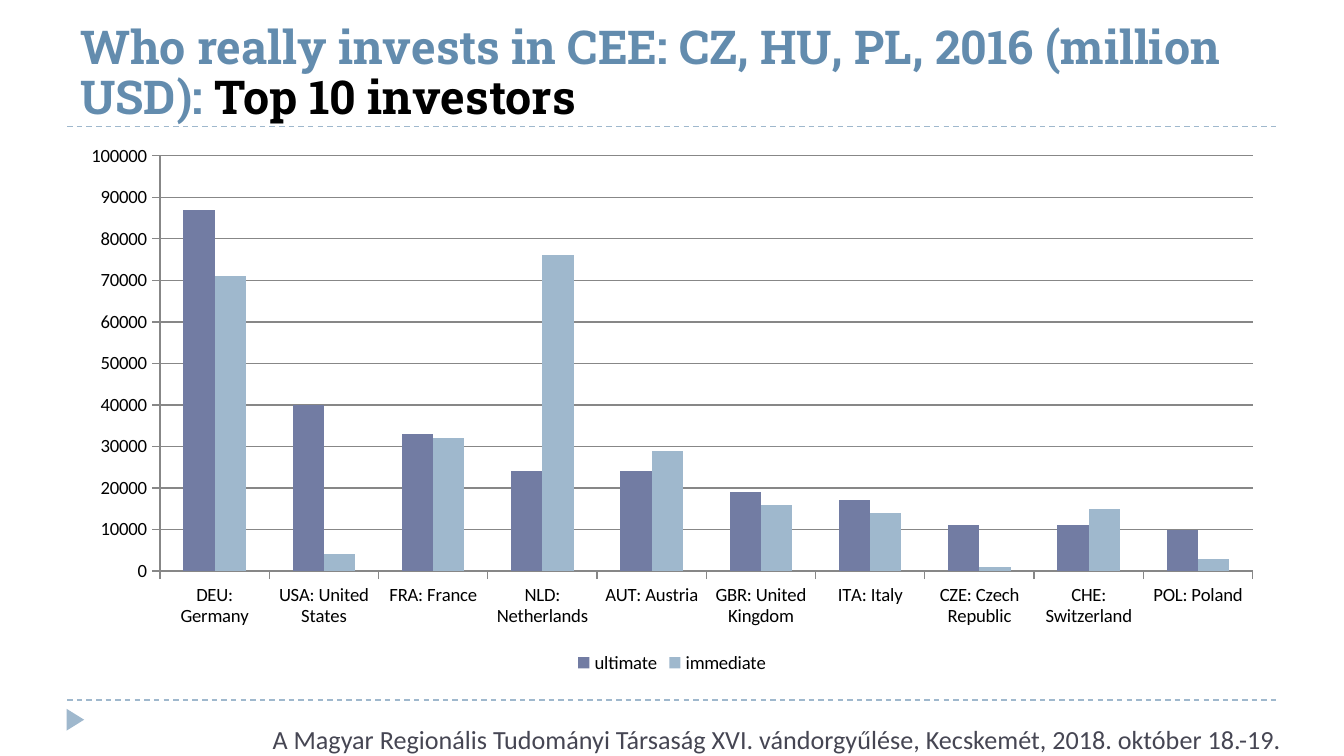
from lxml import etree
from pptx import Presentation
from pptx.chart.data import CategoryChartData
from pptx.dml.color import RGBColor
from pptx.enum.chart import XL_CHART_TYPE, XL_LEGEND_POSITION, XL_TICK_MARK
from pptx.enum.dml import MSO_LINE
from pptx.enum.shapes import MSO_CONNECTOR, MSO_SHAPE
from pptx.enum.text import MSO_ANCHOR, PP_ALIGN
from pptx.oxml.ns import qn
from pptx.util import Cm, Pt

CLUSTERED = XL_CHART_TYPE.COLUMN_CLUSTERED
LEGEND_BOTTOM = XL_LEGEND_POSITION.BOTTOM
TICK_OUTSIDE = XL_TICK_MARK.OUTSIDE
DASH = MSO_LINE.DASH
STRAIGHT = MSO_CONNECTOR.STRAIGHT
TRIANGLE = MSO_SHAPE.ISOSCELES_TRIANGLE
TOP, BOTTOM = MSO_ANCHOR.TOP, MSO_ANCHOR.BOTTOM
LEFT, RIGHT = PP_ALIGN.LEFT, PP_ALIGN.RIGHT

BLACK = RGBColor(0x00, 0x00, 0x00)
TITLE_BLUE = RGBColor(0x63, 0x8C, 0xAE)
FOOTER_GREY = RGBColor(0x46, 0x46, 0x53)
INDIGO = RGBColor(0x72, 0x7C, 0xA3)
PALE_BLUE = RGBColor(0x9F, 0xB8, 0xCD)
AXIS_GREY = RGBColor(0x87, 0x87, 0x87)

TITLE_FONT = "Roboto Slab"
BODY_FONT = "Calibri"
MARGIN = Cm(1.27)
CONTENT_WIDTH = Cm(22.86)

TITLE = [
    ("Who really invests in CEE: CZ, HU, PL, 2016 (million USD): ", TITLE_BLUE),
    ("Top 10 investors", BLACK),
]
FOOTER = [
    ("A Magyar Regionális Tudományi Társaság XVI. vándorgyűlése, "
     "Kecskemét, 2018. október 18.-19.", FOOTER_GREY),
]
INVESTORS = [
    ("DEU: Germany", 87000, 71000),
    ("USA: United States", 40000, 4000),
    ("FRA: France", 33000, 32000),
    ("NLD: Netherlands", 24000, 76000),
    ("AUT: Austria", 24000, 29000),
    ("GBR: United Kingdom", 19000, 16000),
    ("ITA: Italy", 17000, 14000),
    ("CZE: Czech Republic", 11000, 1000),
    ("CHE: Switzerland", 11000, 15000),
    ("POL: Poland", 10000, 3000),
]
SERIES_COLORS = {"ultimate": INDIGO, "immediate": PALE_BLUE}


def add_dashed_rule(slide, top):
    rule = slide.shapes.add_connector(
        STRAIGHT, MARGIN, top, MARGIN + CONTENT_WIDTH, top)
    rule.line.color.rgb = PALE_BLUE
    rule.line.width = Pt(0.75)
    rule.line.dash_style = DASH
    etree.SubElement(rule._element.spPr, qn("a:effectLst"))


def add_footer_marker(slide):
    marker = slide.shapes.add_shape(
        TRIANGLE, Cm(1.22), Cm(13.44), Cm(0.41), Cm(0.33))
    marker.rotation = 90
    marker.shadow.inherit = False
    marker.fill.solid()
    marker.fill.fore_color.rgb = PALE_BLUE
    marker.line.fill.background()


def add_text(slide, box, runs, font_name, size, alignment=LEFT, anchor=TOP):
    """Add one paragraph made of (text, color) runs; return its text frame."""
    frame = slide.shapes.add_textbox(*box).text_frame
    frame.word_wrap = True
    frame.vertical_anchor = anchor
    paragraph = frame.paragraphs[0]
    paragraph.alignment = alignment
    paragraph.font.name = font_name
    paragraph.font.size = Pt(size)
    for text, color in runs:
        run = paragraph.add_run()
        run.text = text
        run.font.color.rgb = color
    return frame


def add_title(slide):
    box = (MARGIN, Cm(0.3), CONTENT_WIDTH, Cm(2.06))
    frame = add_text(slide, box, TITLE, TITLE_FONT, 25, anchor=BOTTOM)
    frame.margin_top = frame.margin_bottom = 0
    frame.paragraphs[0].font.bold = True
    frame.paragraphs[0].line_spacing = 0.9


def style_line(line):
    line.color.rgb = AXIS_GREY
    line.width = Pt(0.75)


def add_investor_chart(slide):
    names, *columns = zip(*INVESTORS)
    data = CategoryChartData(number_format="General")
    data.categories = names
    for series_name, values in zip(SERIES_COLORS, columns):
        data.add_series(series_name, values)

    chart = slide.shapes.add_chart(
        CLUSTERED, MARGIN, Cm(2.54), CONTENT_WIDTH, Cm(10.29), data).chart
    chart.has_title = False
    chart.font.name = BODY_FONT
    chart.font.size = Pt(10)
    chart.font.color.rgb = BLACK
    chart.has_legend = True
    chart.legend.position = LEGEND_BOTTOM
    chart.legend.include_in_layout = False

    plot = chart.plots[0]
    plot.gap_width = 150
    plot.overlap = 0
    plot.vary_by_categories = False
    for series in plot.series:
        series.format.fill.solid()
        series.format.fill.fore_color.rgb = SERIES_COLORS[series.name]

    for axis in (chart.category_axis, chart.value_axis):
        axis.major_tick_mark = TICK_OUTSIDE
        style_line(axis.format.line)
    value_axis = chart.value_axis
    value_axis.minimum_scale = 0
    value_axis.maximum_scale = 100000
    value_axis.major_unit = 10000
    value_axis.has_major_gridlines = True
    style_line(value_axis.major_gridlines.format.line)


def main():
    presentation = Presentation()
    presentation.slide_width = Cm(25.4)
    presentation.slide_height = Cm(14.29)
    slide = presentation.slides.add_slide(presentation.slide_layouts[6])

    for top in (Cm(13.23), Cm(2.39)):
        add_dashed_rule(slide, top)
    add_footer_marker(slide)
    add_title(slide)
    footer_box = (Cm(2.69), Cm(13.54), Cm(21.79), Cm(0.46))
    add_text(slide, footer_box, FOOTER, BODY_FONT, 14, alignment=RIGHT)
    add_investor_chart(slide)
    presentation.save("out.pptx")


if __name__ == "__main__":
    main()
